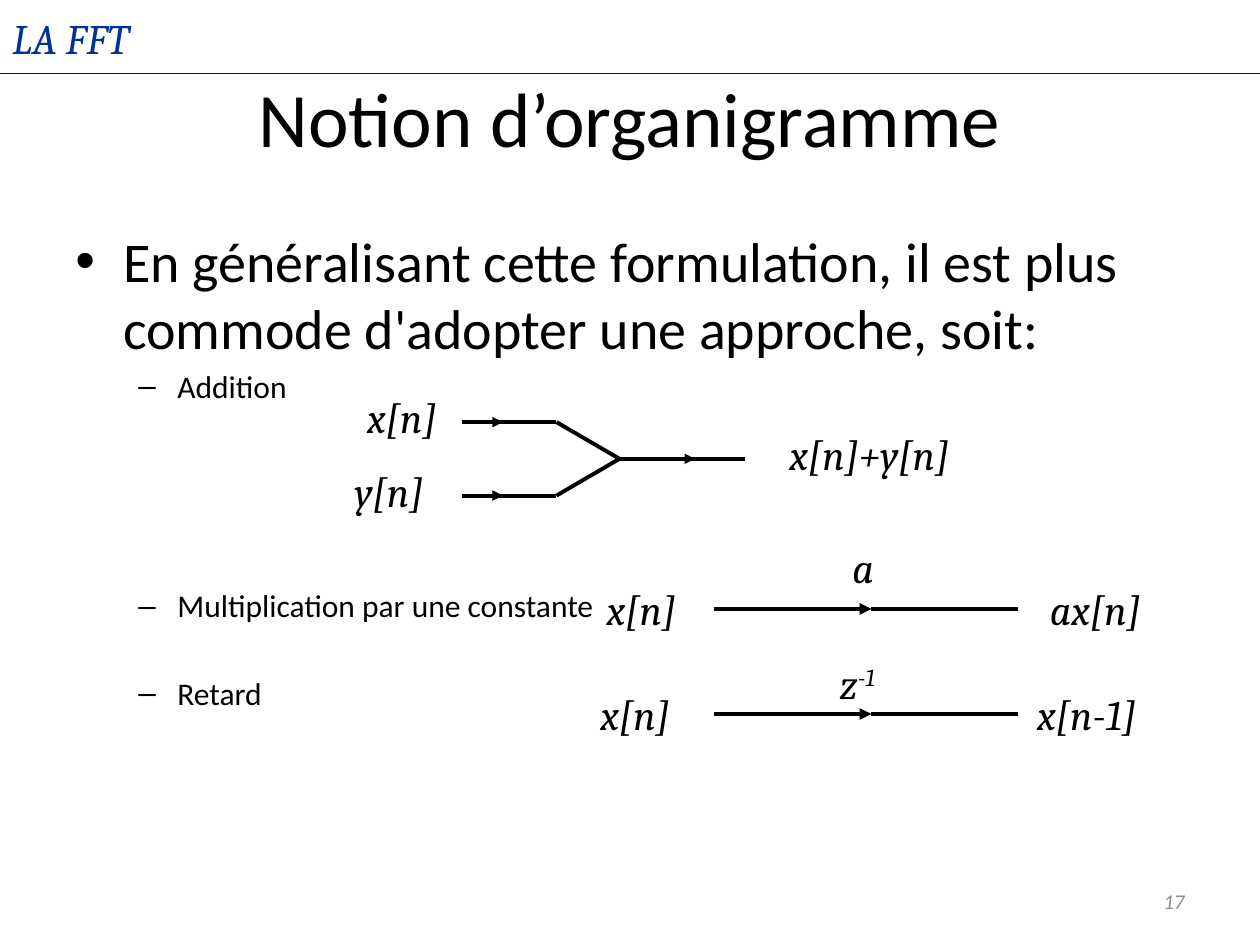
from lxml.etree import SubElement
from pptx import Presentation
from pptx.dml.color import RGBColor
from pptx.enum.shapes import MSO_CONNECTOR
from pptx.enum.text import MSO_ANCHOR, MSO_AUTO_SIZE, PP_ALIGN
from pptx.oxml.ns import qn
from pptx.util import Inches, Pt

BLACK = RGBColor(0x00, 0x00, 0x00)
NAVY = RGBColor(0x00, 0x00, 0x99)
BLUE = RGBColor(0x00, 0x33, 0x99)
GRAY = RGBColor(0x8C, 0x8C, 0x8C)

COLUMNS, ROWS = 120, 90
CELL = Inches(10) / COLUMNS  # square grid cell
LABEL_HEIGHT = 6


def cells(*counts):
    return [round(count * CELL) for count in counts]


def style(run, size, color=BLACK, name="Calibri", italic=False):
    font = run.font
    font.size, font.name, font.italic = Pt(size), name, italic
    font.color.rgb = color


def add_text(slide, box, text, size, color=BLACK, name="Calibri", italic=False,
             align=PP_ALIGN.LEFT, anchor=MSO_ANCHOR.TOP, wrap=True):
    frame = slide.shapes.add_textbox(*cells(*box)).text_frame
    frame.word_wrap, frame.vertical_anchor = wrap, anchor
    frame.text = text
    paragraph = frame.paragraphs[0]
    paragraph.alignment = align
    style(paragraph.runs[0], size, color, name, italic)
    return frame


def add_signal(slide, left, top, width, text, exponent=""):
    """Unwrapped math label, with an optional superscript."""
    frame = add_text(slide, (left, top, width, LABEL_HEIGHT), text, 24,
                     name="Cambria", italic=True, wrap=False)
    frame.auto_size = MSO_AUTO_SIZE.SHAPE_TO_FIT_TEXT
    if exponent:
        power = frame.paragraphs[0].add_run()
        power.text = exponent
        style(power, 24, name="Cambria", italic=True)
        power.font._element.set("baseline", "30000")


def add_line(slide, start, end, width=2.25, color=BLACK, arrow=False):
    line = slide.shapes.add_connector(MSO_CONNECTOR.STRAIGHT, *cells(*start, *end))
    line.line.width = Pt(width)
    line.line.color.rgb = color
    if arrow:
        SubElement(line.line._get_or_add_ln(), qn("a:tailEnd"), type="triangle")
    SubElement(line._element.spPr, qn("a:effectLst"))


def add_bullet(paragraph, text, size, symbol, margin, hanging, before=0, level=0):
    paragraph.text = text
    paragraph.level = level
    paragraph.space_before = Pt(before)
    style(paragraph.runs[0], size)
    properties = paragraph._p.get_or_add_pPr()
    properties.set("marL", str(Inches(margin)))
    properties.set("indent", str(-Inches(hanging)))
    SubElement(properties, qn("a:buFont"), typeface="Arial")
    SubElement(properties, qn("a:buChar"), char=symbol)


def add_body(slide):
    frame = slide.shapes.add_textbox(*cells(6, 21, 108, 59.4)).text_frame
    frame.word_wrap = True
    add_bullet(frame.paragraphs[0],
               "En généralisant cette formulation, il est plus commode "
               "d'adopter une approche, soit:", 32, "•", 0.38, 0.38)
    operations = [("Addition", 3.2), ("Multiplication par une constante", 103.8),
                  ("Retard", 28.3)]
    for operation, before in operations:
        add_bullet(frame.add_paragraph(), operation, 18, "–", 0.81, 0.31, before, level=1)


def add_addition(slide):
    middle, spread = 43.7, 3.5
    start, bend, junction, end = 44, 53, 59, 71
    label_rise = 3.5
    inputs = [("x[n]", 33.8, middle - spread, 46.3),
              ("y[n]", 32.6, middle + spread, 45.8)]
    for text, left, row, arrow_start in inputs:
        add_line(slide, (start, row), (bend, row))
        add_line(slide, (bend, row), (junction, middle))
        add_line(slide, (arrow_start, row), (47.9, row), 1, arrow=True)
        add_signal(slide, left, row - label_rise, 9.4, text)
    add_line(slide, (junction, middle), (end, middle))
    add_line(slide, (63.5, middle), (66.2, middle), 1, arrow=True)
    add_signal(slide, 74, middle - label_rise, 18.8, "x[n]+y[n]")


def add_branch(slide, row, source, gain, result):
    """Arrow from source to result, with its gain above the line."""
    start, middle, end = 68, 83, 97
    add_line(slide, (start, row), (middle, row), arrow=True)
    add_line(slide, (middle, row), (end, row))
    for left, rise, width, *text in (source, gain, result):
        add_signal(slide, left, row - rise, width, *text)


def main():
    deck = Presentation()
    deck.slide_width, deck.slide_height = cells(COLUMNS, ROWS)
    slide = deck.slides.add_slide(deck.slide_layouts[6])

    add_line(slide, (0, 7), (COLUMNS, 7), 0.75, NAVY)
    add_text(slide, (0, 0.6, 45, LABEL_HEIGHT), "LA FFT", 24, BLUE, "Cambria", True)
    add_text(slide, (6, 3.6, 108, 15), "Notion d’organigramme", 44,
             align=PP_ALIGN.CENTER, anchor=MSO_ANCHOR.MIDDLE)
    add_body(slide)
    add_addition(slide)
    add_branch(slide, 58, (56.6, 3, 9.4, "x[n]"), (80, 7, 4.4, "a"),
               (98.8, 3, 11.3, "ax[n]"))
    add_branch(slide, 68, (56, 3, 9.4, "x[n]"), (78.8, 6, 6.2, "z", "-1"),
               (97.6, 3, 12.6, "x[n-1]"))
    add_text(slide, (86, 83.4, 28, 4.8), "17", 12, GRAY, italic=True,
             align=PP_ALIGN.RIGHT, anchor=MSO_ANCHOR.MIDDLE)
    deck.save("out.pptx")


if __name__ == "__main__":
    main()
